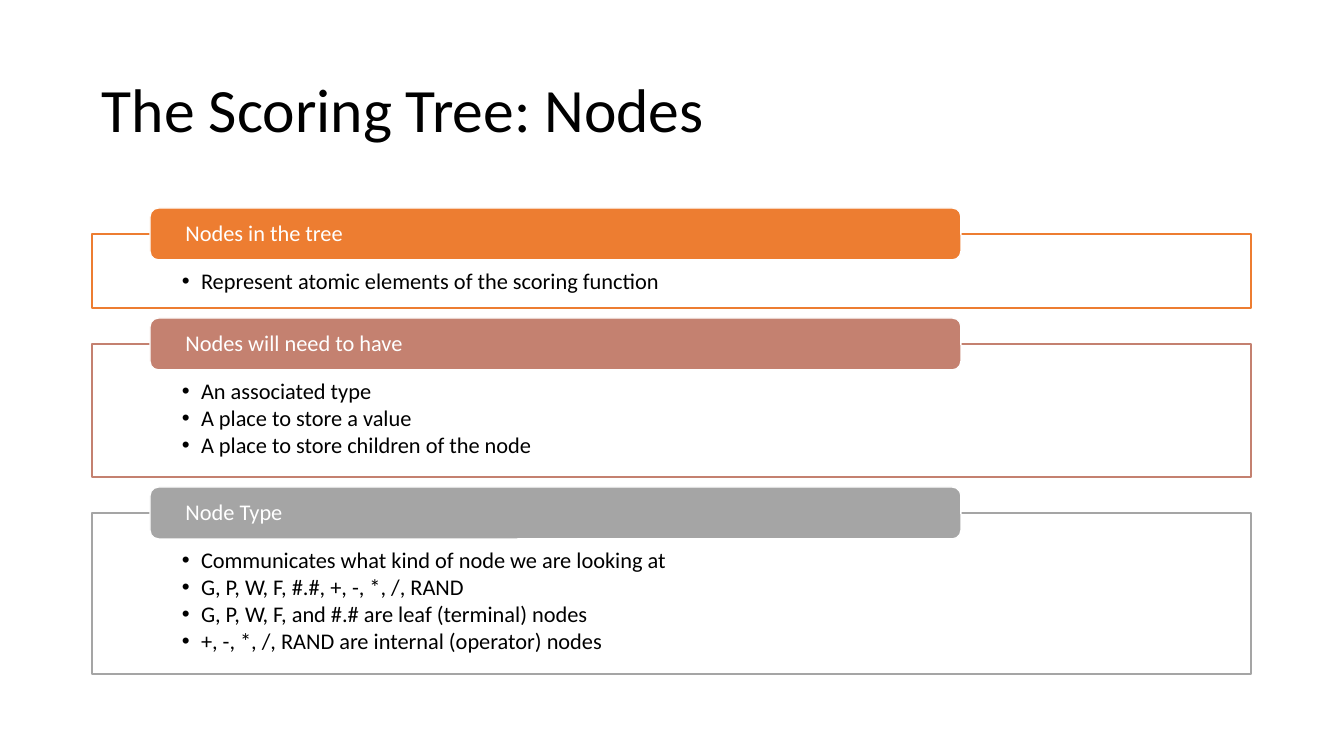
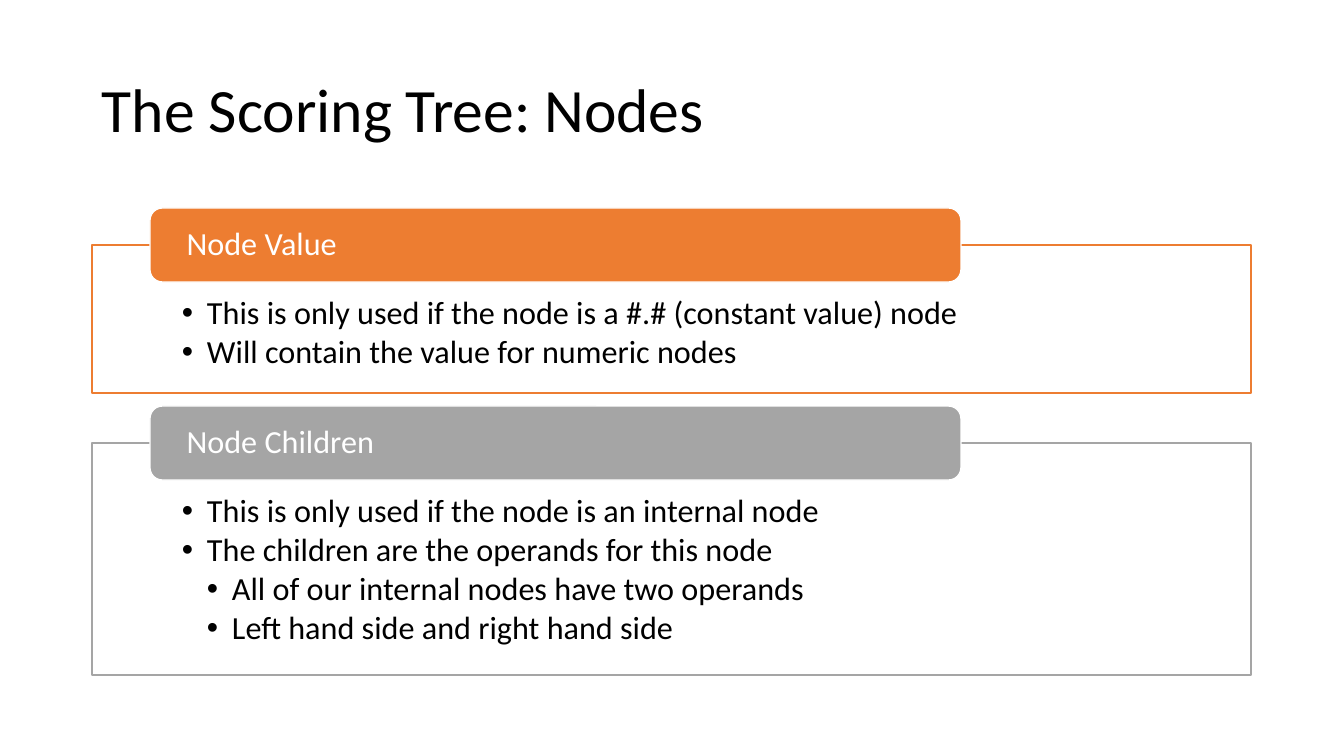
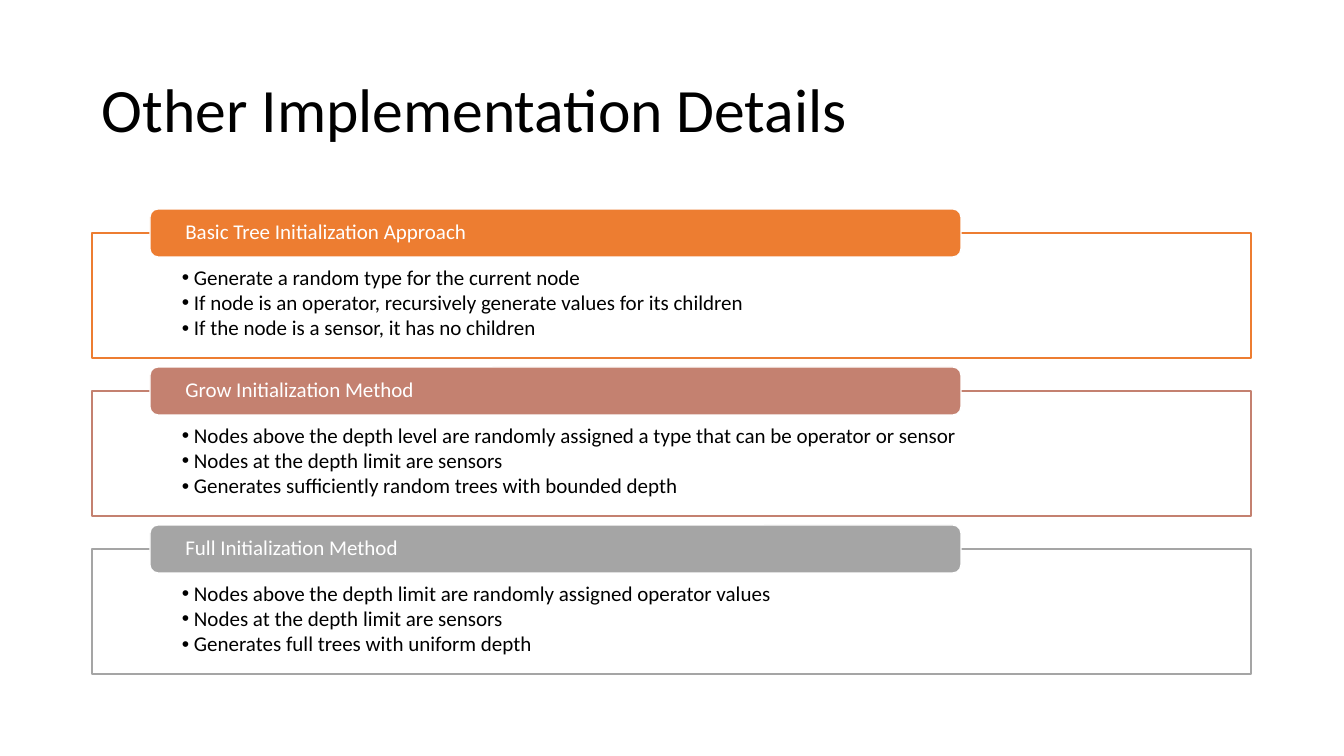
from dataclasses import dataclass
from typing import NamedTuple

from lxml.etree import SubElement
from pptx import Presentation
from pptx.dml.color import RGBColor
from pptx.enum.shapes import MSO_SHAPE
from pptx.enum.text import MSO_ANCHOR, PP_ALIGN
from pptx.oxml.ns import qn
from pptx.shapes.autoshape import Shape
from pptx.slide import Slide
from pptx.text.text import TextFrame
from pptx.util import Emu, Pt

# Shared look
FONT = "Calibri"
BLACK, WHITE = "000000", "FFFFFF"
ORANGE, ROSE, GRAY = "ED7D31", "C48170", "A5A5A5"
SLIDE_W, SLIDE_H = 1344, 756
LEFT, WIDTH = 92, 1159
TITLE_TOP, TITLE_H = 40, 146
TAB_LEFT, TAB_W = 150, 811
TAB_INSET, BODY_INSET = 33, 90


class Bullet(NamedTuple):
    text: str
    level: int = 1


@dataclass(frozen=True)
class Section:
    heading: str
    color: str
    height: int
    bullets: list[Bullet]


@dataclass(frozen=True)
class Page:
    title: str
    top: int
    tab_height: int
    gap: int
    font_size: int
    indent: int
    sections: list[Section]


PAGES = [
    Page("The Scoring Tree: Nodes", 208, 52, 10, 16, 19, [
        Section("Nodes in the tree", ORANGE, 74, [
            Bullet("Represent atomic elements of the scoring function"),
        ]),
        Section("Nodes will need to have", ROSE, 133, [
            Bullet("An associated type"),
            Bullet("A place to store a value"),
            Bullet("A place to store children of the node"),
        ]),
        Section("Node Type", GRAY, 161, [
            Bullet("Communicates what kind of node we are looking at"),
            Bullet("G, P, W, F, #.#, +, -, *, /, RAND"),
            Bullet("G, P, W, F, and #.# are leaf (terminal) nodes"),
            Bullet("+, -, *, /, RAND are internal (operator) nodes"),
        ]),
    ]),
    Page("The Scoring Tree: Nodes", 208, 74, 13, 23, 25, [
        Section("Node Value", ORANGE, 148, [
            Bullet("This is only used if the node is a #.# (constant value) node"),
            Bullet("Will contain the value for numeric nodes"),
        ]),
        Section("Node Children", GRAY, 232, [
            Bullet("This is only used if the node is an internal node"),
            Bullet("The children are the operands for this node"),
            Bullet("All of our internal nodes have two operands", level=2),
            Bullet("Left hand side and right hand side", level=2),
        ]),
    ]),
    Page("Other Implementation Details", 209, 48, 9, 15, 12, [
        Section("Basic Tree Initialization Approach", ORANGE, 125, [
            Bullet("Generate a random type for the current node"),
            Bullet("If node is an operator, recursively generate values for its children"),
            Bullet("If the node is a sensor, it has no children"),
        ]),
        Section("Grow Initialization Method", ROSE, 125, [
            Bullet("Nodes above the depth level are randomly assigned a type "
                   "that can be operator or sensor"),
            Bullet("Nodes at the depth limit are sensors"),
            Bullet("Generates sufficiently random trees with bounded depth"),
        ]),
        Section("Full Initialization Method", GRAY, 125, [
            Bullet("Nodes above the depth limit are randomly assigned operator values"),
            Bullet("Nodes at the depth limit are sensors"),
            Bullet("Generates full trees with uniform depth"),
        ]),
    ]),
]


def px(length: int) -> Emu:
    return Emu(round(length * 914400 / 100.8))


def rgb(color: str) -> RGBColor:
    return RGBColor.from_string(color)


def set_frame(frame: TextFrame, *, side: int, top: int = 0, bottom: int = 0,
              anchor: MSO_ANCHOR = MSO_ANCHOR.MIDDLE) -> None:
    frame.word_wrap = True
    frame.vertical_anchor = anchor
    frame.margin_left = frame.margin_right = px(side)
    frame.margin_top, frame.margin_bottom = px(top), px(bottom)


def write(frame: TextFrame, text: str, *, size: int, color: str = BLACK,
          indent: int = 0, level: int = 1) -> None:
    """Add one paragraph; an indent makes it a bullet."""
    paragraph = frame.add_paragraph() if frame.text else frame.paragraphs[0]
    paragraph.alignment = PP_ALIGN.LEFT
    paragraph.line_spacing = 0.9
    run = paragraph.add_run()
    run.text = text
    run.font.name, run.font.size = FONT, Pt(size)
    run.font.color.rgb = rgb(color)
    if indent:
        paragraph.space_after = Pt(size * 0.13)
        properties = paragraph._p.get_or_add_pPr()
        properties.set("marL", str(px(indent * level)))
        properties.set("indent", str(-px(indent)))
        SubElement(properties, qn("a:buFont"), typeface="Arial")
        SubElement(properties, qn("a:buChar"), char="•")


def add_box(slide: Slide, kind: MSO_SHAPE, left: int, top: int, width: int,
            height: int, *, fill: str, line: str) -> Shape:
    box = slide.shapes.add_shape(kind, px(left), px(top), px(width), px(height))
    box.shadow.inherit = False
    box.fill.solid()
    box.fill.fore_color.rgb = rgb(fill)
    box.line.color.rgb = rgb(line)
    box.line.width = Pt(1)
    return box


def add_title(slide: Slide, title: str) -> None:
    heading = slide.shapes.add_textbox(px(LEFT), px(TITLE_TOP), px(WIDTH), px(TITLE_H))
    set_frame(heading.text_frame, side=10, top=5, bottom=5)
    write(heading.text_frame, title, size=44)


def add_section(slide: Slide, page: Page, section: Section, top: int) -> None:
    # Outlined body, starting halfway down the tab
    body = add_box(slide, MSO_SHAPE.RECTANGLE, LEFT, top + page.tab_height // 2,
                   WIDTH, section.height, fill=WHITE, line=section.color)
    fill_color = body.fill._xPr.find(qn("a:solidFill")).find(qn("a:srgbClr"))
    SubElement(fill_color, qn("a:alpha"), val="90000")
    set_frame(body.text_frame, side=BODY_INSET, top=round(page.tab_height * 0.7),
              bottom=12, anchor=MSO_ANCHOR.TOP)
    for bullet in section.bullets:
        write(body.text_frame, bullet.text, size=page.font_size,
              indent=page.indent, level=bullet.level)

    # Coloured heading tab
    tab = add_box(slide, MSO_SHAPE.ROUNDED_RECTANGLE, TAB_LEFT, top, TAB_W,
                  page.tab_height, fill=section.color, line=WHITE)
    set_frame(tab.text_frame, side=TAB_INSET)
    write(tab.text_frame, section.heading, size=page.font_size, color=WHITE)


def main() -> None:
    deck = Presentation()
    deck.slide_width, deck.slide_height = px(SLIDE_W), px(SLIDE_H)
    blank = deck.slide_layouts[6]
    for page in PAGES:
        slide = deck.slides.add_slide(blank)
        add_title(slide, page.title)
        top = page.top
        for section in page.sections:
            add_section(slide, page, section, top)
            top += page.tab_height // 2 + section.height + page.gap
    deck.save("out.pptx")


if __name__ == "__main__":
    main()
